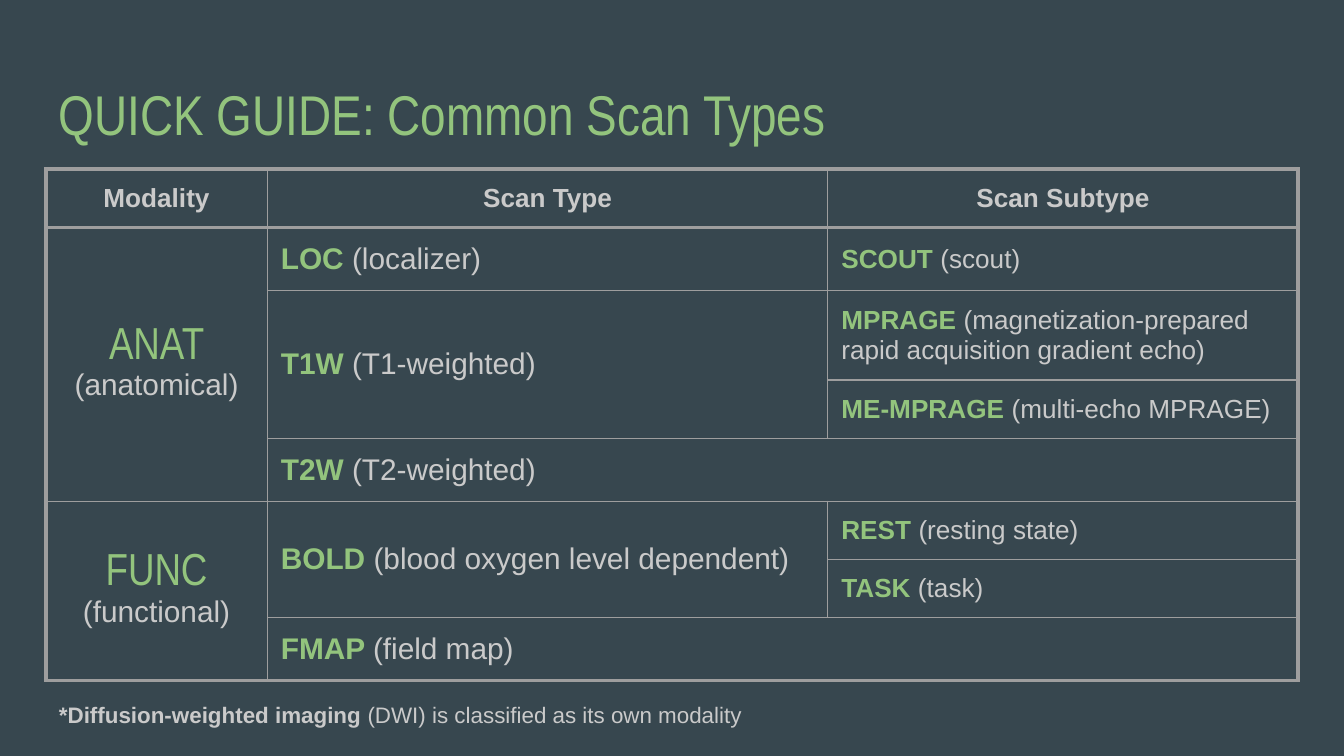
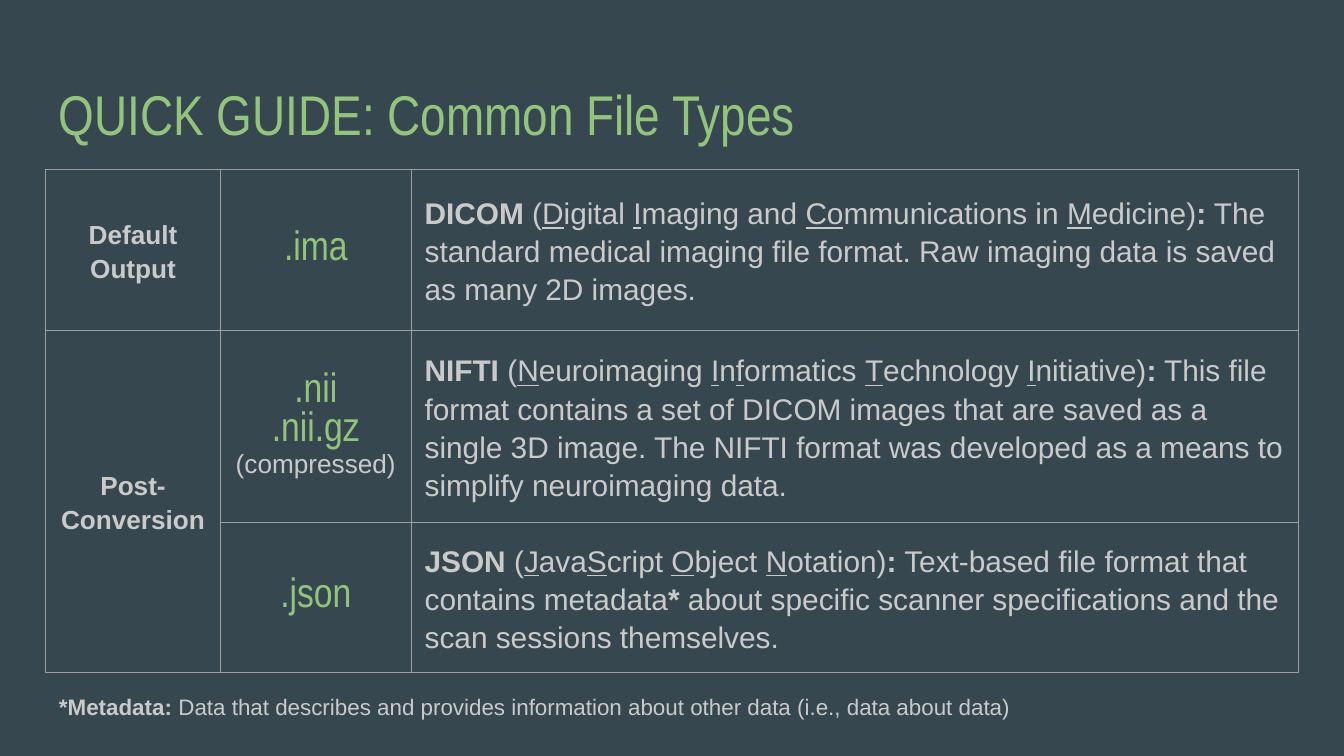
from dataclasses import dataclass

from pptx import Presentation
from pptx.dml.color import RGBColor
from pptx.enum.text import MSO_ANCHOR, PP_ALIGN
from pptx.oxml import parse_xml
from pptx.oxml.ns import nsdecls
from pptx.util import Inches, Pt

LEFT, CENTER = PP_ALIGN.LEFT, PP_ALIGN.CENTER
TOP, MIDDLE = MSO_ANCHOR.TOP, MSO_ANCHOR.MIDDLE

SLATE = RGBColor(0x37, 0x47, 0x4F)
GREEN = RGBColor(0x93, 0xC4, 0x7D)
LIGHT = RGBColor(0xCA, 0xCA, 0xCA)
RULE = RGBColor(0x9E, 0x9E, 0x9E)

THIN, THICK = 0.75, 2.25
MARGIN = 0.34
INSET = 0.1
TABLE_TOP = 1.26
FRAME_SIZE = 3.28


@dataclass(frozen=True)
class Style:
    size: int
    font: str = "Arial"
    color: RGBColor = LIGHT
    bold_color: RGBColor = LIGHT
    align: int = LEFT
    spacing: float = 1.0


TITLE = Style(30, "Arial Narrow", GREEN)
FOOTNOTE = Style(12)
HEADER = Style(14, align=CENTER)
MODALITY = Style(24, "Arial Narrow", GREEN, align=CENTER)
MODALITY_NOTE = Style(16, align=CENTER)
SCAN = Style(16, bold_color=GREEN)
SUBTYPE = Style(14, bold_color=GREEN)
STAGE = Style(14, align=CENTER, spacing=1.15)
EXTENSION = Style(22, "Arial Narrow", GREEN, align=CENTER)
EXTENSION_NOTE = Style(14, align=CENTER)
DESCRIPTION = Style(16, spacing=1.15)

SCAN_CELLS = [
    (0, 0, 1, 1, [("|Modality|", HEADER)]),
    (0, 1, 1, 1, [("|Scan Type|", HEADER)]),
    (0, 2, 1, 2, [("|Scan Subtype|", HEADER)]),
    (1, 0, 4, 1, [("ANAT", MODALITY), ("(anatomical)", MODALITY_NOTE)]),
    (1, 1, 1, 1, [("|LOC |(localizer)", SCAN)]),
    (1, 2, 1, 2, [("|SCOUT |(scout)", SUBTYPE)]),
    (2, 1, 2, 1, [("|T1W |(T1-weighted)", SCAN)]),
    (2, 2, 1, 2, [("|MPRAGE |(magnetization-prepared rapid acquisition "
                   "gradient echo)", SUBTYPE)]),
    (3, 2, 1, 2, [("|ME-MPRAGE |(multi-echo MPRAGE)", SUBTYPE)]),
    (4, 1, 1, 3, [("|T2W |(T2-weighted)", SCAN)]),
    (5, 0, 3, 1, [("FUNC", MODALITY), ("(functional)", MODALITY_NOTE)]),
    (5, 1, 2, 1, [("|BOLD |(blood oxygen level dependent)", SCAN)]),
    (5, 2, 1, 2, [("|REST |(resting state)", SUBTYPE)]),
    (6, 2, 1, 2, [("|TASK |(task)", SUBTYPE)]),
    (7, 1, 1, 3, [("|FMAP |(field map)", SCAN)]),
]

FILE_CELLS = [
    (0, 0, 1, 1, [("|Default Output|", STAGE)]),
    (0, 1, 1, 1, [(".ima", EXTENSION)]),
    (0, 2, 1, 1, [("|DICOM| (_D_igital _I_maging and _Co_mmunications in "
                   "_M_edicine)|:| The standard medical imaging file format. "
                   "Raw imaging data is saved as many 2D images.",
                   DESCRIPTION)]),
    (1, 0, 2, 1, [("|Post-|", STAGE), ("|Conversion|", STAGE)]),
    (1, 1, 1, 1, [(".nii", EXTENSION), (".nii.gz", EXTENSION),
                  ("(compressed)", EXTENSION_NOTE)]),
    (1, 2, 1, 1, [("|NIFTI| (_N_euroimaging _I_n_f_ormatics _T_echnology "
                   "_I_nitiative)|:| This file format contains a set of DICOM "
                   "images that are saved as a single 3D image. The NIFTI "
                   "format was developed as a means to simplify neuroimaging "
                   "data.", DESCRIPTION)]),
    (2, 1, 1, 1, [(".json", EXTENSION)]),
    (2, 2, 1, 1, [("|JSON| (_J_ava_S_cript _O_bject _N_otation)|:| Text-based "
                   "file format that contains metadata|*| about specific "
                   "scanner specifications and the scan sessions themselves.",
                   DESCRIPTION)]),
]


def write_paragraph(p, text, style):
    p.alignment = style.align
    p.line_spacing = style.spacing
    p.font.name = style.font
    p.font.size = Pt(style.size)
    p.font.color.rgb = style.color
    for i, chunk in enumerate(text.split("|")):
        for j, part in enumerate(chunk.split("_")):
            if not part:
                continue
            r = p.add_run()
            r.text = part
            r.font.bold = i % 2 == 1
            if j % 2:
                r.font.underline = True
            if i % 2 and style.bold_color != style.color:
                r.font.color.rgb = style.bold_color


def write_lines(tf, lines):
    for i, (text, style) in enumerate(lines):
        p = tf.add_paragraph() if i else tf.paragraphs[0]
        write_paragraph(p, text, style)


def set_insets(box):
    box.margin_left = box.margin_right = Inches(INSET)
    box.margin_top = box.margin_bottom = Inches(INSET)


def add_text(s, top, width, height, text, style, anchor):
    sp = s.shapes.add_textbox(Inches(MARGIN), Inches(top),
                              Inches(width), Inches(height))
    tf = sp.text_frame
    tf.word_wrap = True
    tf.vertical_anchor = anchor
    set_insets(tf)
    write_lines(tf, [(text, style)])


def set_borders(cell, **widths):
    tc_pr = cell._tc.get_or_add_tcPr()
    for side in "LRTB":
        tc_pr.append(parse_xml(
            f'<a:ln{side} {nsdecls("a")} w="{Pt(widths[side])}">'
            f'<a:solidFill><a:srgbClr val="{RULE}"/></a:solidFill>'
            f'<a:prstDash val="solid"/></a:ln{side}>'))


def add_grid(s, col_widths, row_heights, cells, frame, header_rule=THIN):
    n_rows, n_cols = len(row_heights), len(col_widths)
    sp = s.shapes.add_table(n_rows, n_cols, Inches(MARGIN), Inches(TABLE_TOP),
                            Inches(FRAME_SIZE), Inches(FRAME_SIZE))
    table = sp.table
    table.first_row = table.horz_banding = False
    for column, width in zip(table.columns, col_widths):
        column.width = Inches(width)
    for row, height in zip(table.rows, row_heights):
        row.height = Inches(height)
    sp.width = sp.height = Inches(FRAME_SIZE)
    row_rules = [frame, header_rule] + [THIN] * (n_rows - 2) + [frame]
    col_rules = [frame] + [THIN] * (n_cols - 1) + [frame]
    for row, col, row_span, col_span, lines in cells:
        cell = table.cell(row, col)
        end_row, end_col = row + row_span, col + col_span
        if row_span * col_span > 1:
            cell.merge(table.cell(end_row - 1, end_col - 1))
        cell.vertical_anchor = MIDDLE
        set_insets(cell)
        set_borders(cell, L=col_rules[col], R=col_rules[end_col],
                    T=row_rules[row], B=row_rules[end_row])
        cell.fill.background()
        write_lines(cell.text_frame, lines)


def add_guide(prs, topic):
    s = prs.slides.add_slide(prs.slide_layouts[6])
    s.background.fill.solid()
    s.background.fill.fore_color.rgb = SLATE
    add_text(s, 0.49, 9.32, 0.63, f"QUICK GUIDE: {topic}", TITLE, TOP)
    return s


def add_footnote(s, top, text):
    add_text(s, top, 8.29, 0.4, text, FOOTNOTE, MIDDLE)


def main():
    prs = Presentation()
    prs.slide_width = Inches(10)
    prs.slide_height = prs.slide_width * 9 // 16

    s = add_guide(prs, "Common Scan Types")
    add_grid(s, [1.65, 4.17, 1.52, 1.98],
             [0.35, 0.25, 0.3, 0.17, 0.21, 0.2, 0.23, 0.31],
             SCAN_CELLS, THICK, THICK)
    add_footnote(s, 5.12, "|*Diffusion-weighted imaging| (DWI) is classified "
                          "as its own modality")

    s = add_guide(prs, "Common File Types")
    add_grid(s, [1.3, 1.42, 6.6], [1.2, 1.39, 1.11], FILE_CELLS, THIN)
    add_footnote(s, 5.06, "|*Metadata: |Data that describes and provides "
                          "information about other data (i.e., data about "
                          "data)")

    prs.save("out.pptx")


if __name__ == "__main__":
    main()
